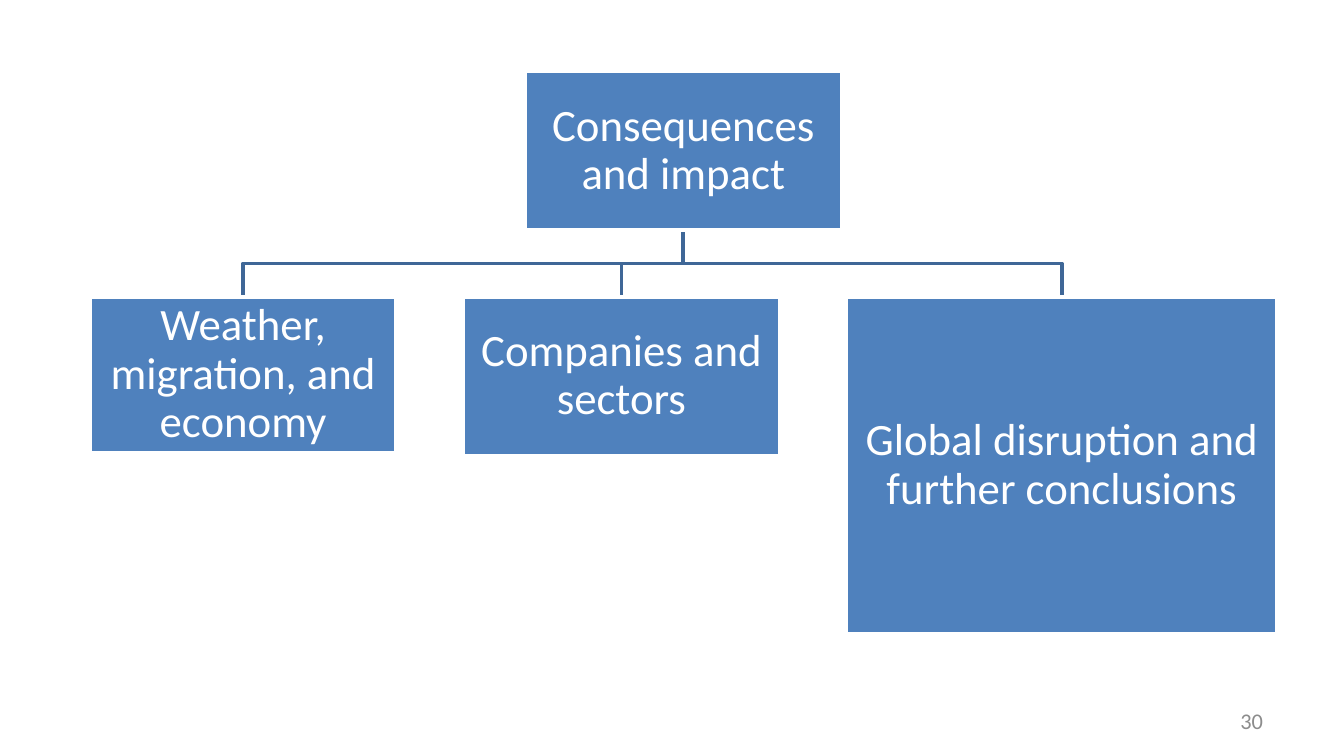
from pptx import Presentation
from pptx.dml.color import RGBColor
from pptx.enum.shapes import MSO_SHAPE
from pptx.enum.text import MSO_ANCHOR, PP_ALIGN
from pptx.util import Cm, Pt

BLUE = RGBColor(0x4F, 0x81, 0xBD)
DARK_BLUE = RGBColor(0x3F, 0x67, 0x97)
WHITE = RGBColor(0xFF, 0xFF, 0xFF)
GREY = RGBColor(0x8C, 0x8C, 0x8C)

ROOT = ("Consequences and impact", 5.99, 3.0)
BRANCHES = [
    ("Weather, migration, and economy", 5.79, 2.95),
    ("Companies and sectors", 5.99, 3.0),
    ("Global disruption and further conclusions", 8.13, 6.38),
]
PAGE_NUMBER = "30"

LEFT, ROOT_TOP, BRANCH_TOP, GAP = 1.7, 1.35, 5.61, 1.26
INSET = Cm(0.05)
BOX_FRAME = {
    "word_wrap": True, "vertical_anchor": MSO_ANCHOR.MIDDLE,
    "margin_left": INSET, "margin_right": INSET,
    "margin_top": INSET, "margin_bottom": INSET,
}
BOX_PARAGRAPH = {"alignment": PP_ALIGN.CENTER, "line_spacing": 0.9}
NUMBER_FRAME = {"word_wrap": True, "vertical_anchor": MSO_ANCHOR.MIDDLE}
NUMBER_PARAGRAPH = {"alignment": PP_ALIGN.RIGHT}


def apply(target, values):
    for name, value in values.items():
        setattr(target, name, value)


def write(shape, wording, frame_format, paragraph_format, size, color):
    frame = shape.text_frame
    apply(frame, frame_format)
    paragraph = frame.paragraphs[0]
    apply(paragraph, paragraph_format)
    run = paragraph.add_run()
    run.text = wording
    apply(run.font, {"name": "Calibri", "size": Pt(size)})
    run.font.color.rgb = color


def outline(shape, color):
    shape.shadow.inherit = False
    shape.line.color.rgb = color
    shape.line.width = Pt(2)


def add_branch_line(slide, start_x, start_y, end_x, end_y):
    middle_y = (start_y + end_y) / 2
    builder = slide.shapes.build_freeform(Cm(start_x), Cm(start_y))
    corners = [(start_x, middle_y), (end_x, middle_y), (end_x, end_y)]
    builder.add_line_segments([(Cm(x), Cm(y)) for x, y in corners], close=False)
    branch_line = builder.convert_to_shape()
    branch_line.fill.background()
    outline(branch_line, DARK_BLUE)


def add_box(slide, wording, left, top, width, height):
    box = slide.shapes.add_shape(
        MSO_SHAPE.RECTANGLE, Cm(left), Cm(top), Cm(width), Cm(height))
    box.fill.solid()
    box.fill.fore_color.rgb = BLUE
    outline(box, WHITE)
    write(box, wording, BOX_FRAME, BOX_PARAGRAPH, 24, WHITE)


def main():
    deck = Presentation()
    apply(deck, {"slide_width": Cm(25.4), "slide_height": Cm(14.29)})
    slide = deck.slides.add_slide(deck.slide_layouts[6])

    page_number = slide.shapes.add_textbox(Cm(18.2), Cm(13.24), Cm(5.92), Cm(0.76))
    write(page_number, PAGE_NUMBER, NUMBER_FRAME, NUMBER_PARAGRAPH, 12, GREY)

    placed = []
    left = LEFT
    for wording, width, height in BRANCHES:
        placed.append((wording, left, BRANCH_TOP, width, height))
        left += width + GAP
    center = (LEFT + left - GAP) / 2

    root_wording, root_width, root_height = ROOT
    for _, branch_left, top, width, _ in reversed(placed):
        add_branch_line(slide, center, ROOT_TOP + root_height,
                        branch_left + width / 2, top)

    add_box(slide, root_wording, center - root_width / 2, ROOT_TOP,
            root_width, root_height)
    for branch in placed:
        add_box(slide, *branch)

    deck.save("out.pptx")


if __name__ == "__main__":
    main()
